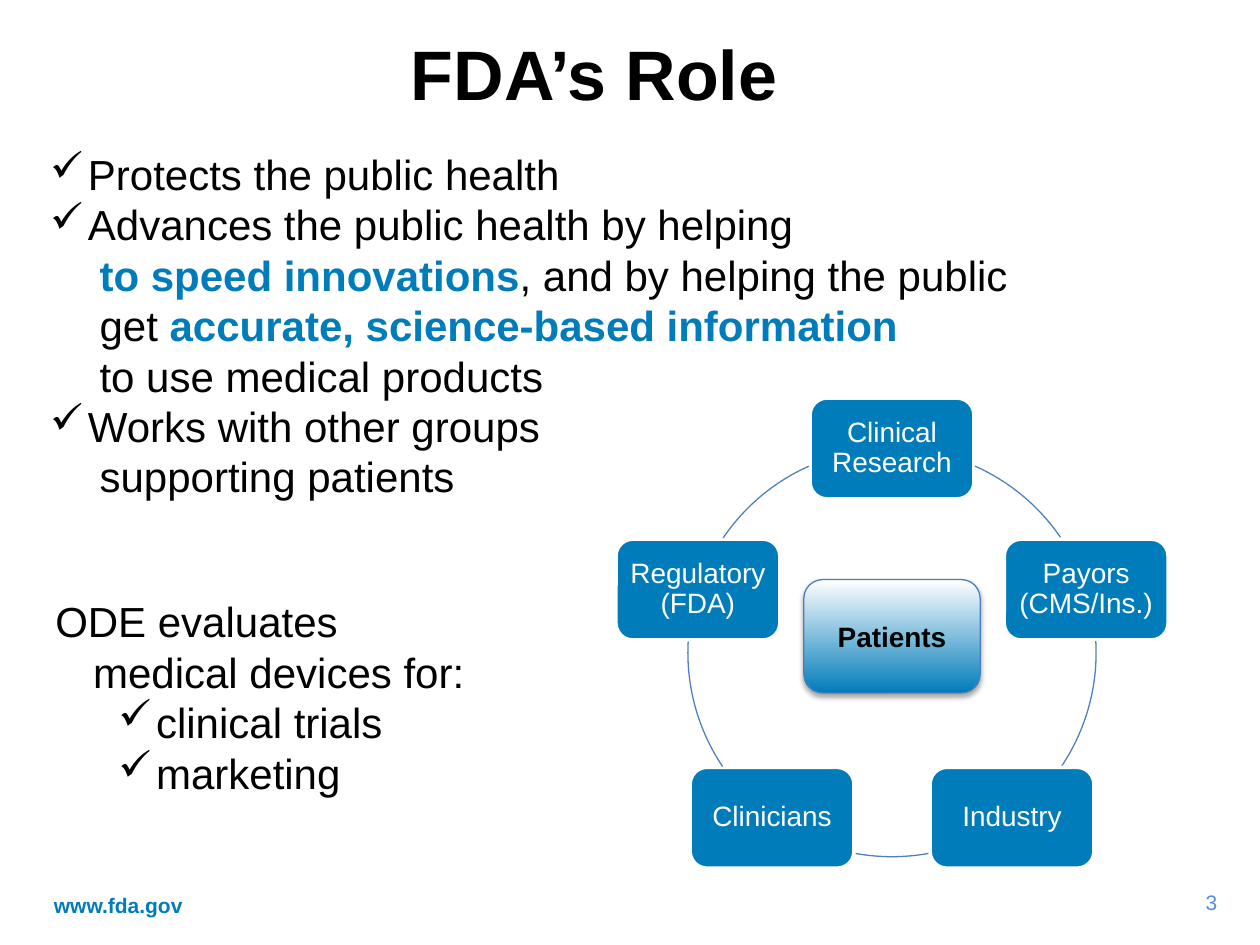
import math
import pptx
import pptx.util
import pptx.dml.color
import pptx.enum.shapes
import pptx.enum.text
import pptx.oxml
import pptx.oxml.ns

BLUE, BLACK, WHITE = "007CBA", "000000", "FFFFFF"
FONT = "Arial"
TITLE = "FDA’s Role"
ROLES = [
    [("Protects the public health", False)],
    [("Advances the public health by helping\n ", False),
     ("to speed innovations", True),
     (", and by helping the public\n get ", False),
     ("accurate, science-based information\n", True),
     (" to use medical products", False)],
    [("Works with other groups\n supporting patients", False)],
]
EVALUATES = "ODE evaluates\nmedical devices for:"
PURPOSES = ["clinical trials", "marketing"]
GROUPS = ["Clinical Research", "Payors (CMS/Ins.)", "Industry", "Clinicians", "Regulatory (FDA)"]
ARCS = [(-66, -34.2), (-3.2, 33.9), (79.7, 100.3), (146.1, 183.2), (214.2, 246)]
CENTER_X, CENTER_Y, RADIUS = 7.08, 5.18, 1.62
NODE_W, NODE_H = 1.3, 0.8
HUB_W, HUB_H, HUB_Y = 1.4, 0.9, 5.05

SHAPES = pptx.enum.shapes.MSO_SHAPE
ALIGN = pptx.enum.text.PP_ALIGN
ANCHOR = pptx.enum.text.MSO_ANCHOR
Inches = pptx.util.Inches
Pt = pptx.util.Pt


def rgb(color):
    return pptx.dml.color.RGBColor.from_string(color)


def set_font(font, size, color, bold=False):
    font.name, font.size, font.bold = FONT, Pt(size), bold
    font.color.rgb = rgb(color)


def add_text(para, text):
    spans = []
    for index, line in enumerate(text.split("\n")):
        if index:
            para.add_line_break()
        if line:
            span = para.add_run()
            span.text = line
            spans.append(span)
    return spans


def hang(para, left, bullet=None):
    props = para._p.get_or_add_pPr()
    props.set("marL", str(Inches(left)))
    props.set("indent", str(Inches(-0.3)))
    if bullet:
        mark = props.makeelement(pptx.oxml.ns.qn("a:buChar"), {"char": bullet})
        props.append(mark)


def add_box(page, left, top, width, height, wrap=True):
    box = page.shapes.add_textbox(*map(Inches, (left, top, width, height)))
    box.text_frame.word_wrap = wrap
    return box.text_frame


def next_para(frame, index):
    return frame.add_paragraph() if index else frame.paragraphs[0]


def add_shape(page, kind, x, y, width, height, line, weight):
    shape = page.shapes.add_shape(
        kind, *map(Inches, (x - width / 2, y - height / 2, width, height)))
    shape.shadow.inherit = False
    shape.line.color.rgb = rgb(line)
    shape.line.width = Pt(weight)
    return shape


def label(shape, text, color, bold=False, spacing=1.0):
    frame = shape.text_frame
    frame.word_wrap = True
    frame.vertical_anchor = ANCHOR.MIDDLE
    frame.margin_left = frame.margin_right = Inches(0.07)
    frame.margin_top = frame.margin_bottom = Inches(0.07)
    para = frame.paragraphs[0]
    add_text(para, text)
    para.alignment = ALIGN.CENTER
    para.line_spacing = spacing
    set_font(para.font, 16, color, bold)


def add_title(page):
    title = page.shapes.title
    title.left, title.top, title.width, title.height = map(Inches, (0.44, 0.19, 8.55, 1.01))
    frame = title.text_frame
    frame.text = TITLE
    frame.auto_size = pptx.enum.text.MSO_AUTO_SIZE.NONE
    frame.vertical_anchor = ANCHOR.TOP
    para = frame.paragraphs[0]
    para.alignment = ALIGN.CENTER
    set_font(para.font, 40, BLACK, True)


def add_roles(page):
    frame = add_box(page, 0.3, 1.13, 9.4, 3.33)
    for index, parts in enumerate(ROLES):
        para = next_para(frame, index)
        hang(para, 0.3, "✓")
        set_font(para.font, 24, BLACK)
        for text, strong in parts:
            for span in add_text(para, text):
                set_font(span.font, 24, BLUE if strong else BLACK, strong)


def add_evaluation(page):
    frame = add_box(page, 0.34, 4.68, 4.08, 1.72)
    for index, text in enumerate([EVALUATES] + PURPOSES):
        para = next_para(frame, index)
        hang(para, 0.8 if index else 0.3, "✓" if index else None)
        add_text(para, text)
        set_font(para.font, 24, BLACK)


def add_cycle(page):
    for index, (name, angles) in enumerate(zip(GROUPS, ARCS)):
        turn = math.radians(360 / len(GROUPS) * index - 90)
        node = add_shape(page, SHAPES.ROUNDED_RECTANGLE,
                         CENTER_X + RADIUS * math.cos(turn),
                         CENTER_Y + RADIUS * math.sin(turn), NODE_W, NODE_H, WHITE, 2)
        node.fill.solid()
        node.fill.fore_color.rgb = rgb(BLUE)
        label(node, name, WHITE, spacing=0.9)
        arc = add_shape(page, SHAPES.ARC, CENTER_X, CENTER_Y,
                        2 * RADIUS, 2 * RADIUS, "4F81BD", 0.75)
        arc.fill.background()
        for slot, angle in enumerate(angles):
            arc.adjustments[slot] = angle % 360 * 0.6


def add_hub(page):
    hub = add_shape(page, SHAPES.ROUNDED_RECTANGLE, CENTER_X, HUB_Y,
                    HUB_W, HUB_H, "4B7EBC", 0.75)
    hub.fill.gradient()
    hub.fill.gradient_angle = 270
    for stop, color, position in zip(hub.fill.gradient_stops, (WHITE, BLUE), (0, 1)):
        stop.color.rgb = rgb(color)
        stop.position = position
    effects = hub._element.spPr.find(pptx.oxml.ns.qn("a:effectLst"))
    effects.append(pptx.oxml.parse_xml(
        f'<a:outerShdw {pptx.oxml.ns.nsdecls("a")} blurRad="{Pt(3.1)}" dist="{Pt(1.8)}" '
        f'dir="5400000" rotWithShape="0"><a:srgbClr val="{BLACK}">'
        '<a:alpha val="35000"/></a:srgbClr></a:outerShdw>'))
    label(hub, "Patients", BLACK, True)


def add_footer(page):
    site = add_box(page, 0.33, 6.98, 3.17, 0.4)
    site.vertical_anchor = ANCHOR.MIDDLE
    number = add_box(page, 9.35, 7.01, 0.41, 0.3)
    number.paragraphs[0].alignment = ALIGN.RIGHT
    for frame, text, color, bold in ((site, "www.fda.gov", BLUE, True),
                                     (number, "3", "558ED5", False)):
        add_text(frame.paragraphs[0], text)
        set_font(frame.paragraphs[0].font, 12, color, bold)


def main():
    deck = pptx.Presentation()
    deck.slide_width, deck.slide_height = Inches(10), Inches(7.5)
    page = deck.slides.add_slide(deck.slide_layouts[5])
    add_title(page)
    add_roles(page)
    add_cycle(page)
    add_hub(page)
    add_evaluation(page)
    add_footer(page)
    deck.save("out.pptx")


if __name__ == "__main__":
    main()
